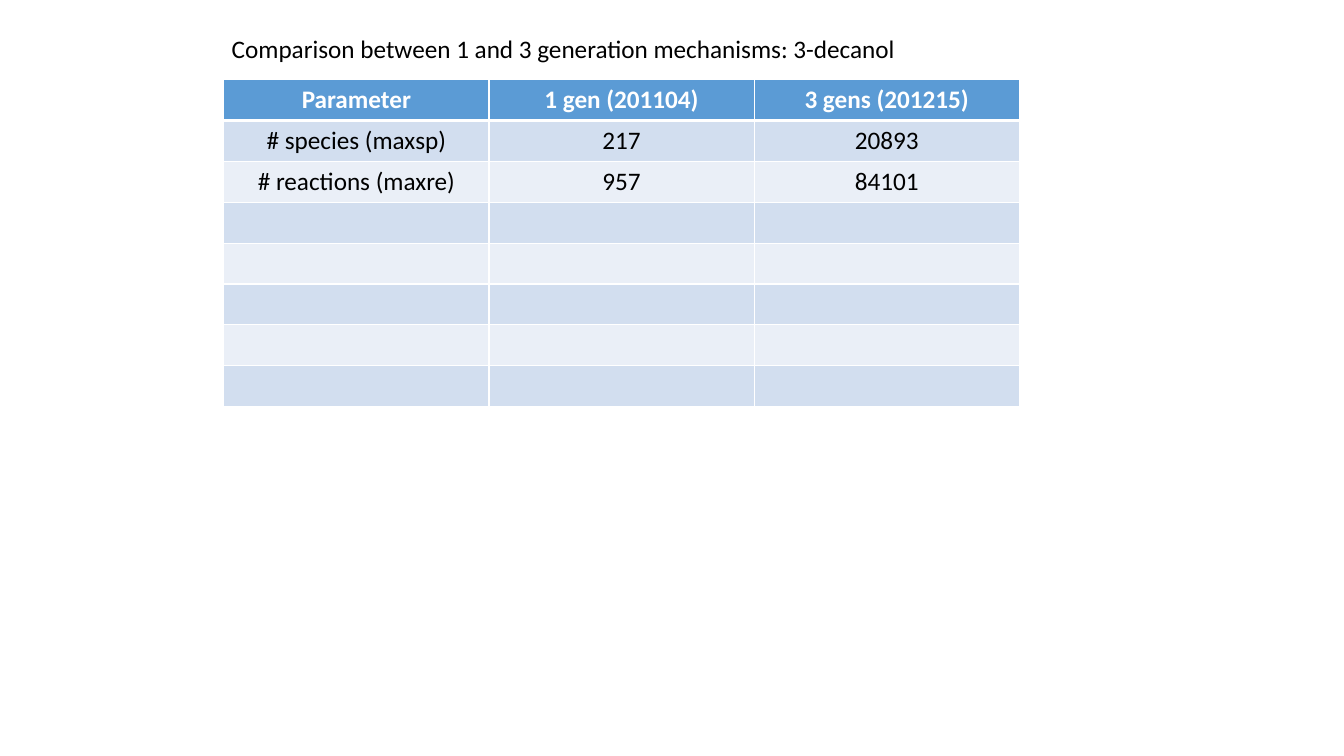
import pptx
import pptx.dml.color
import pptx.enum.text
import pptx.oxml
import pptx.oxml.ns
import pptx.util

Inches = pptx.util.Inches
Pt = pptx.util.Pt
Align = pptx.enum.text.PP_ALIGN


def color(hex):
    return pptx.dml.color.RGBColor.from_string(hex)


def write(frame, text, size=18, font="Calibri", ink="000000", bold=False, align=Align.LEFT):
    para = frame.paragraphs[0]
    para.alignment = align
    run = para.add_run()
    run.text = text
    run.font.size = Pt(size)
    run.font.name = font
    run.font.bold = bold
    run.font.color.rgb = color(ink)


class Deck:
    head = "5B9BD5"
    bands = ("D2DEEF", "EAEFF7")
    white = "FFFFFF"

    def __init__(self, slide):
        self.slide = slide

    def label(self, text, x, y, w, h):
        box = self.slide.shapes.add_textbox(Inches(x), Inches(y), Inches(w), Inches(h))
        box.text_frame.word_wrap = True
        box.text_frame.auto_size = pptx.enum.text.MSO_AUTO_SIZE.SHAPE_TO_FIT_TEXT
        write(box.text_frame, text)

    def border(self, cell, side, width):
        cell._tc.get_or_add_tcPr().append(pptx.oxml.parse_xml(
            f'<a:ln{side} {pptx.oxml.ns.nsdecls("a")} w="{Pt(width)}"><a:solidFill>'
            f'<a:srgbClr val="{self.white}"/></a:solidFill></a:ln{side}>'))

    def table(self, data, rows, x, y, w, h):
        cols = len(data[0])
        grid = self.slide.shapes.add_table(
            rows, cols, Inches(x), Inches(y), Inches(w), Inches(h)).table
        for r in range(rows):
            top = r == 0
            # A thick rule parts the header from the body
            widths = {"L": 1, "R": 1, "T": 3 if r == 1 else 1, "B": 3 if top else 1}
            for c in range(cols):
                cell = grid.cell(r, c)
                for side, width in widths.items():
                    self.border(cell, side, width)
                cell.fill.solid()
                cell.fill.fore_color.rgb = color(self.head if top else self.bands[(r - 1) % 2])
                if r < len(data):
                    write(cell.text_frame, data[r][c], bold=top, align=Align.CENTER,
                          ink=self.white if top else "000000")


def main():
    show = pptx.Presentation()
    show.slide_width = Inches(13.33)
    show.slide_height = Inches(7.5)
    deck = Deck(show.slides.add_slide(show.slide_layouts[6]))

    # Comparison table, with blank rows left to fill in
    data = [
        ("Parameter", "1 gen (201104)", "3 gens (201215)"),
        ("# species (maxsp)", "217", "20893"),
        ("# reactions (maxre)", "957", "84101"),
    ]
    deck.table(data, 8, 2.22, 0.79, 7.89, 3.24)

    # Heading
    deck.label("Comparison between 1 and 3 generation mechanisms: 3-decanol",
               2.2, 0.28, 8.9, 0.4)

    show.save("out.pptx")


if __name__ == "__main__":
    main()
